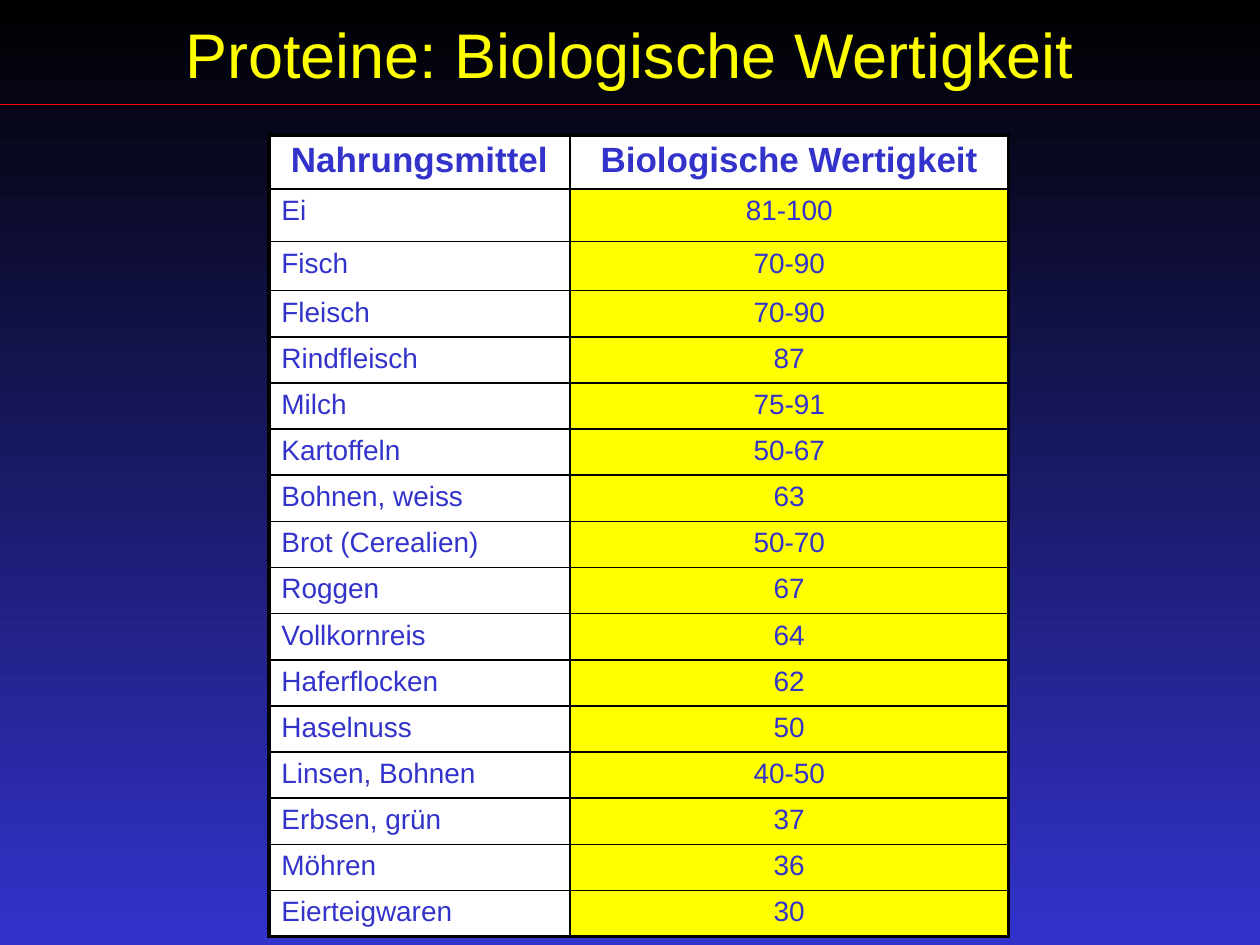
from dataclasses import dataclass

from lxml.etree import SubElement
from pptx import Presentation
from pptx.dml.color import RGBColor as Rgb
from pptx.enum.shapes import MSO_CONNECTOR as Link
from pptx.enum.text import MSO_ANCHOR as Anchor, MSO_AUTO_SIZE as Fit, PP_ALIGN as Align
from pptx.oxml import parse_xml
from pptx.oxml.ns import nsdecls, qn
from pptx.util import Cm, Pt


@dataclass(frozen=True)
class Theme:
    font: str = "Arial"
    black: str = "000000"
    blue: str = "3333CC"
    yellow: str = "FFFF00"
    white: str = "FFFFFF"
    red: str = "FF0000"
    title: int = 36
    head: int = 20
    body: int = 16
    thin: float = 1
    thick: float = 2.25


THEME = Theme()
WIDTH, HEIGHT = 25.4, 19.05
HEAD = ("Nahrungsmittel", "Biologische Wertigkeit")
FOODS = [
    ("Ei", "81-100"),
    ("Fisch", "70-90"),
    ("Fleisch", "70-90"),
    ("Rindfleisch", "87"),
    ("Milch", "75-91"),
    ("Kartoffeln", "50-67"),
    ("Bohnen, weiss", "63"),
    ("Brot (Cerealien)", "50-70"),
    ("Roggen", "67"),
    ("Vollkornreis", "64"),
    ("Haferflocken", "62"),
    ("Haselnuss", "50"),
    ("Linsen, Bohnen", "40-50"),
    ("Erbsen, grün", "37"),
    ("Möhren", "36"),
    ("Eierteigwaren", "30"),
]
COLS = (6.07, 8.84)
TOP_ROWS, ROW = (1.09, 1.06, 0.99), 0.93


def write(frame, text, size=THEME.body, color=THEME.blue, bold=False, align=Align.LEFT):
    para = frame.paragraphs[0]
    para.alignment = align
    run = para.add_run()
    run.text = text
    font = run.font
    font.name, font.size, font.bold = THEME.font, Pt(size), bold
    font.color.rgb = Rgb.from_string(color)


def paint_back(slide):
    fill = slide.background.fill
    fill.gradient()
    fill.gradient_angle = 270
    for stop, color in zip(fill.gradient_stops, (THEME.black, THEME.blue)):
        stop.color.rgb = Rgb.from_string(color)


def add_title(slide, text):
    title = slide.shapes.title
    title.left, title.top, title.width, title.height = Cm(0.69), Cm(0.33), Cm(24), Cm(1.5)
    frame = title.text_frame
    frame.auto_size, frame.vertical_anchor = Fit.NONE, Anchor.MIDDLE
    write(frame, text, size=THEME.title, color=THEME.yellow, align=Align.CENTER)


def add_rule(slide, y):
    rule = slide.shapes.add_connector(Link.STRAIGHT, 0, Cm(y), Cm(WIDTH), Cm(y))
    rule.line.color.rgb = Rgb.from_string(THEME.red)
    rule.line.width = Pt(0.75)
    SubElement(rule._element.spPr, qn("a:effectLst"))


def set_edges(cell, outer):
    """Draw the four borders; sides named in outer are thick."""
    props = cell._tc.get_or_add_tcPr()
    for spot, side in enumerate("LRTB"):
        width = Pt(THEME.thick if side in outer else THEME.thin)
        props.insert(spot, parse_xml(
            f'<a:ln{side} {nsdecls("a")} w="{width}"><a:solidFill>'
            f'<a:srgbClr val="{THEME.black}"/></a:solidFill></a:ln{side}>'))


def fill_cell(cell, text, row, col, last):
    head = row == 0
    cell.fill.solid()
    cell.fill.fore_color.rgb = Rgb.from_string(
        THEME.yellow if col and not head else THEME.white)
    write(cell.text_frame, text, size=THEME.head if head else THEME.body, bold=head,
          align=Align.CENTER if head or col else Align.LEFT)
    outer = "R" if col else "L"
    if head:
        outer += "T"
    if row == last:
        outer += "B"
    set_edges(cell, outer)


def add_grid(slide, rows, left, top):
    sizes = list(TOP_ROWS) + [ROW] * (len(rows) - len(TOP_ROWS))
    table = slide.shapes.add_table(
        len(rows), len(COLS), Cm(left), Cm(top), Cm(sum(COLS)), Cm(sum(sizes))).table
    table.first_row = table.horz_banding = False
    for col, width in zip(table.columns, COLS):
        col.width = Cm(width)
    for line, height in zip(table.rows, sizes):
        line.height = Cm(height)
    for r, texts in enumerate(rows):
        for c, text in enumerate(texts):
            fill_cell(table.cell(r, c), text, r, c, len(rows) - 1)


def main():
    deck = Presentation()
    deck.slide_width, deck.slide_height = Cm(WIDTH), Cm(HEIGHT)
    slide = deck.slides.add_slide(deck.slide_layouts.get_by_name("Title Only"))
    paint_back(slide)
    add_title(slide, "Proteine: Biologische Wertigkeit")
    add_rule(slide, 2.1)
    add_grid(slide, [HEAD] + FOODS, 5.42, 2.72)
    deck.save("out.pptx")


if __name__ == "__main__":
    main()
